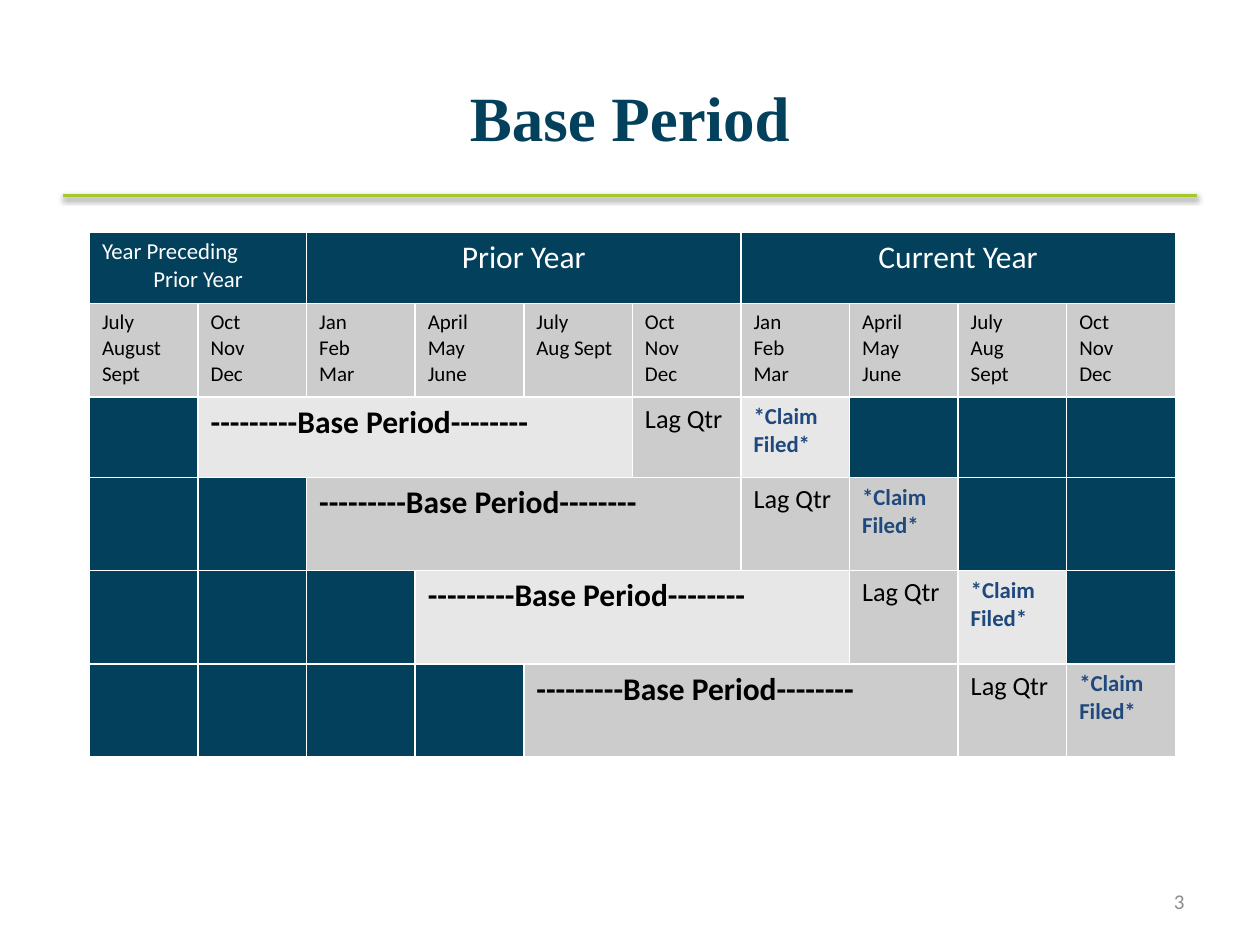
from dataclasses import dataclass

from lxml.etree import SubElement
from pptx import Presentation
from pptx.dml.color import RGBColor
from pptx.enum.shapes import MSO_CONNECTOR as Connector
from pptx.enum.text import MSO_ANCHOR as Anchor, PP_ALIGN as Align
from pptx.oxml.ns import qn
from pptx.util import Inches, Pt


@dataclass(frozen=True)
class Theme:
    navy: str = "02405C"
    green: str = "A5C92B"
    blue: str = "1F497D"
    white: str = "FFFFFF"
    black: str = "000000"
    gray: str = "CCCCCC"
    light: str = "E7E7E7"
    number: str = "8C8C8C"
    title_font: str = "Times New Roman"
    body_font: str = "Calibri"
    title: int = 36
    large: int = 18
    lag: int = 15
    medium: int = 13
    small: int = 12


THEME = Theme()
COLUMN_WIDTH = 0.862
ROW_HEIGHTS = [0.57, 0.74, 0.64, 0.74, 0.74, 0.74]
BASE_SPAN = 4
QUARTERS = [
    ["July", "August", "Sept"],
    ["Oct", "Nov", "Dec"],
    ["Jan", "Feb", "Mar"],
    ["April", "May", "June"],
    ["July", "Aug Sept"],
    ["Oct", "Nov", "Dec"],
    ["Jan", "Feb", "Mar"],
    ["April", "May", "June"],
    ["July", "Aug", "Sept"],
    ["Oct", "Nov", "Dec"],
]


def write_lines(text_frame, lines, size, color, bold=False, align=Align.LEFT,
                font=THEME.body_font):
    text_frame.text = "\n".join(lines)
    for paragraph in text_frame.paragraphs:
        paragraph.alignment = align
        for run in paragraph.runs:
            run.font.name = font
            run.font.size = Pt(size)
            run.font.bold = bold
            run.font.color.rgb = RGBColor.from_string(color)


def add_title(slide, text):
    title = slide.shapes.title
    title.left, title.top = Inches(0.5), Inches(0.3)
    title.width, title.height = Inches(9), Inches(1.25)
    title.text_frame.vertical_anchor = Anchor.MIDDLE
    write_lines(title.text_frame, [text], THEME.title, THEME.navy, True,
                Align.CENTER, THEME.title_font)


def add_rule(slide):
    rule = slide.shapes.add_connector(
        Connector.STRAIGHT, Inches(0.5), Inches(1.55), Inches(9.5), Inches(1.55))
    rule.line.color.rgb = RGBColor.from_string(THEME.green)
    rule.line.width = Pt(2)
    effects = SubElement(rule._element.spPr, qn("a:effectLst"))
    shadow = SubElement(effects, qn("a:outerShdw"), blurRad=str(Pt(3.1)),
                        dist=str(Pt(1.6)), dir="5400000", rotWithShape="0")
    color = SubElement(shadow, qn("a:srgbClr"), val=THEME.black)
    SubElement(color, qn("a:alpha"), val="38000")


def format_cell(cell, fill):
    properties = cell._tc.get_or_add_tcPr()
    for side in ("lnL", "lnR", "lnT", "lnB"):
        border = SubElement(properties, qn(f"a:{side}"), w=str(Pt(1)))
        solid = SubElement(border, qn("a:solidFill"))
        SubElement(solid, qn("a:srgbClr"), val=THEME.white)
    cell.fill.solid()
    cell.fill.fore_color.rgb = RGBColor.from_string(fill)


def merge_cells(table, row, column, span):
    cell = table.cell(row, column)
    cell.merge(table.cell(row, column + span - 1))
    return cell


def fill_year_row(table):
    years = [
        (0, 2, ["Year Preceding", "Prior Year"], THEME.medium),
        (2, 4, ["Prior Year"], THEME.large),
        (6, 4, ["Current Year"], THEME.large),
    ]
    for column, span, lines, size in years:
        cell = merge_cells(table, 0, column, span)
        write_lines(cell.text_frame, lines, size, THEME.white, align=Align.CENTER)
    table.cell(0, 0).text_frame.paragraphs[0].alignment = Align.LEFT


def fill_quarter_row(table):
    for column, months in enumerate(QUARTERS):
        cell = table.cell(1, column)
        cell.fill.fore_color.rgb = RGBColor.from_string(THEME.gray)
        write_lines(cell.text_frame, months, THEME.small, THEME.black)


def fill_claim_row(table, row):
    start = row - 1
    lag = start + BASE_SPAN
    band = THEME.gray if row % 2 else THEME.light
    fills = [band] * BASE_SPAN + [THEME.gray, band]
    for column, fill in enumerate(fills, start):
        table.cell(row, column).fill.fore_color.rgb = RGBColor.from_string(fill)
    base = merge_cells(table, row, start, BASE_SPAN)
    write_lines(base.text_frame, ["---------Base Period--------"],
                THEME.large, THEME.black, True)
    write_lines(table.cell(row, lag).text_frame, ["Lag Qtr"],
                THEME.lag, THEME.black)
    write_lines(table.cell(row, lag + 1).text_frame, ["*Claim", "Filed*"],
                THEME.medium, THEME.blue, True)


def add_period_table(slide):
    columns = len(QUARTERS)
    table = slide.shapes.add_table(
        len(ROW_HEIGHTS), columns, Inches(0.71), Inches(1.84),
        Inches(columns * COLUMN_WIDTH), Inches(sum(ROW_HEIGHTS))).table
    for column in table.columns:
        column.width = Inches(COLUMN_WIDTH)
    for row, height in zip(table.rows, ROW_HEIGHTS):
        row.height = Inches(height)
    for cell in table.iter_cells():
        format_cell(cell, THEME.navy)
    fill_year_row(table)
    fill_quarter_row(table)
    for row in range(2, len(ROW_HEIGHTS)):
        fill_claim_row(table, row)


def add_slide_number(slide, number):
    text_frame = slide.shapes.add_textbox(
        Inches(7.17), Inches(6.95), Inches(2.33), Inches(0.4)).text_frame
    text_frame.word_wrap = True
    text_frame.vertical_anchor = Anchor.MIDDLE
    write_lines(text_frame, [number], THEME.small, THEME.number, align=Align.RIGHT)


def main():
    presentation = Presentation()
    presentation.slide_width = Inches(10)
    presentation.slide_height = Inches(7.5)
    slide = presentation.slides.add_slide(presentation.slide_layouts[5])
    add_rule(slide)
    add_title(slide, "Base Period")
    add_period_table(slide)
    add_slide_number(slide, "3")
    presentation.save("out.pptx")


if __name__ == "__main__":
    main()
